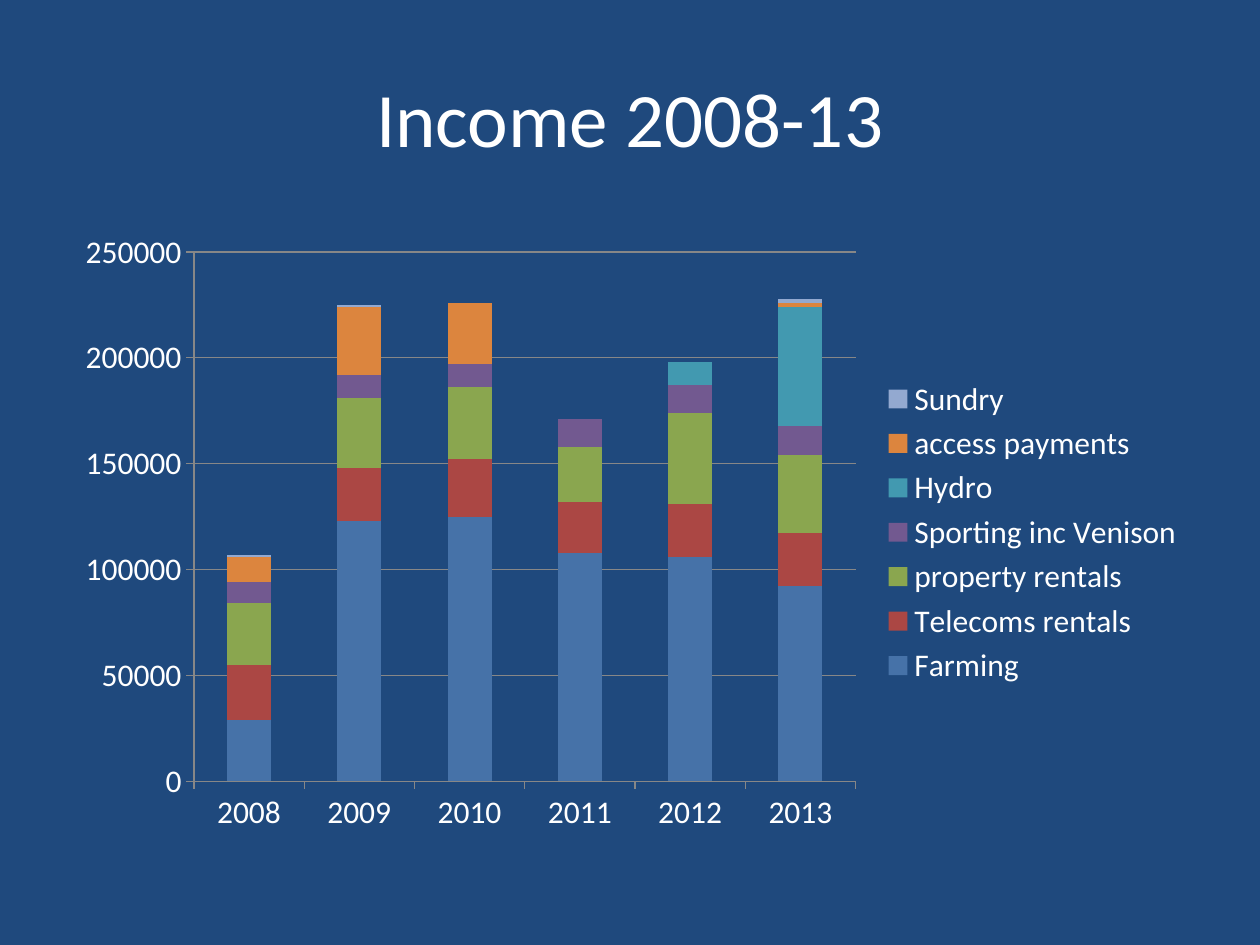
import pptx
import pptx.chart.data
import pptx.dml.color
import pptx.enum.chart
import pptx.enum.text
import pptx.util

Pt = pptx.util.Pt
RGBColor = pptx.dml.color.RGBColor

FONT = "Calibri"
NAVY = RGBColor(0x1F, 0x49, 0x7D)
WHITE = RGBColor(0xFF, 0xFF, 0xFF)
GREY = RGBColor(0x87, 0x87, 0x87)
BLUE = RGBColor(0x46, 0x72, 0xA8)
RED = RGBColor(0xAB, 0x47, 0x44)
GREEN = RGBColor(0x8A, 0xA6, 0x4F)
PURPLE = RGBColor(0x72, 0x59, 0x90)
TEAL = RGBColor(0x42, 0x99, 0xB0)
ORANGE = RGBColor(0xDC, 0x85, 0x3E)
PALE_BLUE = RGBColor(0x93, 0xA9, 0xD0)

YEARS = ["2008", "2009", "2010", "2011", "2012", "2013"]
INCOME = [
    ("Farming", BLUE, (29000, 123000, 125000, 108000, 106000, 92000)),
    ("Telecoms rentals", RED, (26000, 25000, 27000, 24000, 25000, 25000)),
    ("property rentals", GREEN, (29000, 33000, 34000, 26000, 43000, 37000)),
    ("Sporting inc Venison", PURPLE, (10000, 11000, 11000, 13000, 13000, 14000)),
    ("Hydro", TEAL, (0, 0, 0, 0, 11000, 56000)),
    ("access payments", ORANGE, (12000, 32000, 29000, 0, 0, 2000)),
    ("Sundry", PALE_BLUE, (1000, 1000, 0, 0, 0, 2000)),
]


def style_font(font, size):
    font.name = FONT
    font.size = Pt(size)
    font.color.rgb = WHITE


def style_line(line):
    line.color.rgb = GREY
    line.width = Pt(0.75)


def add_title(slide, text):
    shape = slide.shapes.add_textbox(Pt(36), Pt(21.6), Pt(648), Pt(90))
    frame = shape.text_frame
    frame.word_wrap = True
    frame.vertical_anchor = pptx.enum.text.MSO_ANCHOR.MIDDLE
    paragraph = frame.paragraphs[0]
    paragraph.alignment = pptx.enum.text.PP_ALIGN.CENTER
    run = paragraph.add_run()
    run.text = text
    style_font(run.font, 44)


def style_axis(axis):
    axis.major_tick_mark = pptx.enum.chart.XL_TICK_MARK.OUTSIDE
    axis.minor_tick_mark = pptx.enum.chart.XL_TICK_MARK.NONE
    style_line(axis.format.line)


def add_income_chart(slide):
    data = pptx.chart.data.CategoryChartData()
    data.categories = YEARS
    for name, _, values in INCOME:
        data.add_series(name, values)
    chart = slide.shapes.add_chart(
        pptx.enum.chart.XL_CHART_TYPE.COLUMN_STACKED,
        Pt(36), Pt(126), Pt(648), Pt(356.4), data,
    ).chart
    style_font(chart.font, 18)
    chart.has_title = False
    chart.has_legend = True
    chart.legend.position = pptx.enum.chart.XL_LEGEND_POSITION.RIGHT
    chart.legend.include_in_layout = False

    style_axis(chart.category_axis)
    value_axis = chart.value_axis
    style_axis(value_axis)
    value_axis.minimum_scale = 0
    value_axis.maximum_scale = 250000
    value_axis.major_unit = 50000
    value_axis.has_major_gridlines = True
    style_line(value_axis.major_gridlines.format.line)

    plot = chart.plots[0]
    plot.gap_width = 150
    plot.overlap = 100
    plot.vary_by_categories = False
    for series, (_, color, _) in zip(plot.series, INCOME):
        series.format.fill.solid()
        series.format.fill.fore_color.rgb = color


def main():
    presentation = pptx.Presentation()
    presentation.slide_width = Pt(720)
    presentation.slide_height = Pt(540)
    slide = presentation.slides.add_slide(presentation.slide_layouts[6])
    slide.background.fill.solid()
    slide.background.fill.fore_color.rgb = NAVY
    add_title(slide, "Income 2008-13")
    add_income_chart(slide)
    presentation.save("out.pptx")


if __name__ == "__main__":
    main()
